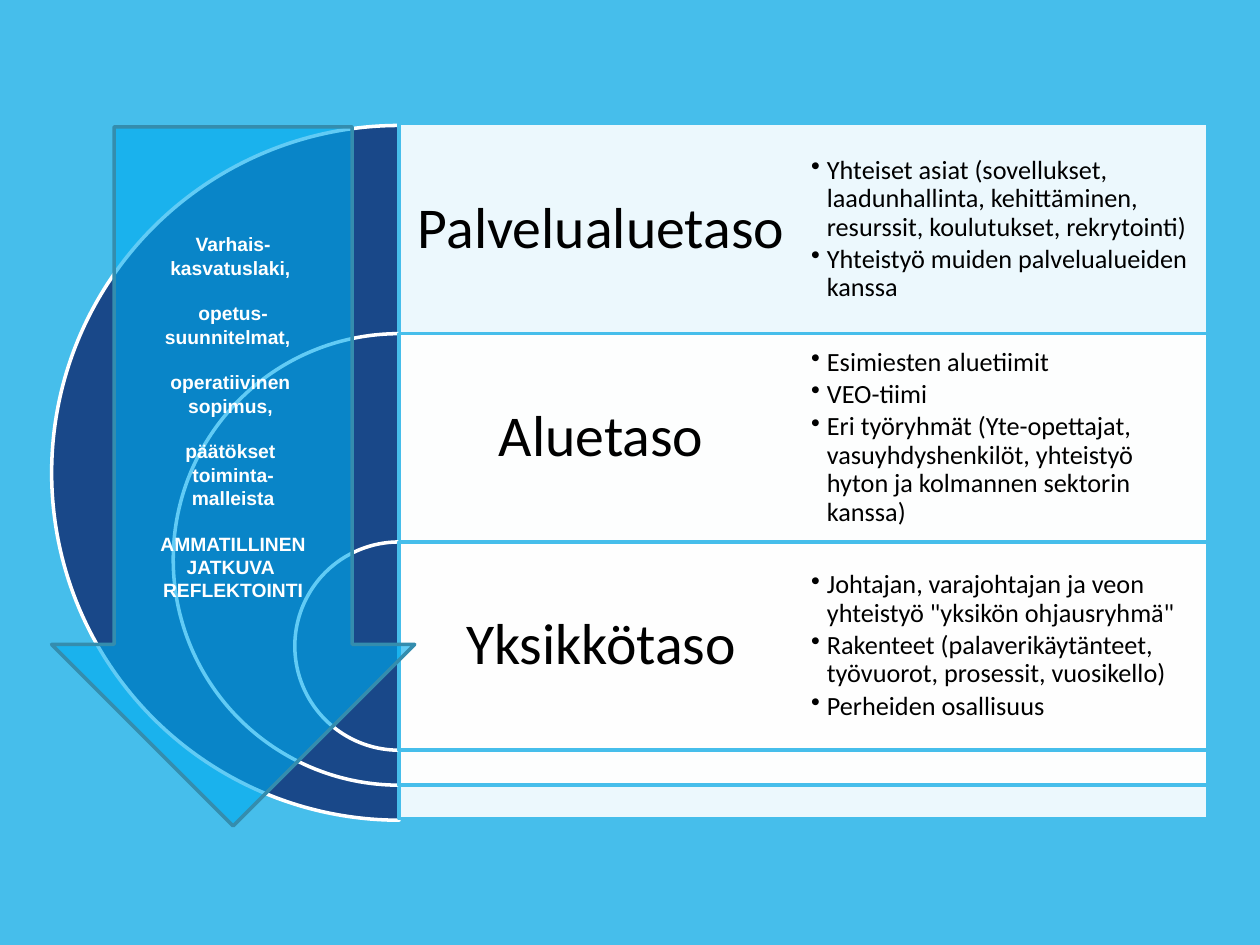
from lxml import etree
from pptx import Presentation
from pptx.dml.color import RGBColor
from pptx.enum.shapes import MSO_SHAPE
from pptx.enum.text import MSO_ANCHOR, PP_ALIGN
from pptx.oxml.ns import qn
from pptx.util import Pt

PIE, RECT, ARROW = MSO_SHAPE.PIE, MSO_SHAPE.RECTANGLE, MSO_SHAPE.DOWN_ARROW
MIDDLE, CENTER, LEFT = MSO_ANCHOR.MIDDLE, PP_ALIGN.CENTER, PP_ALIGN.LEFT

COLORS = {"sky": "46BEEB", "navy": "194889", "white": "FFFFFF",
          "black": "000000", "arrow": "00ACEF", "arrow_line": "348DAE"}

LEVELS = [
    ("Palvelualuetaso", [
        "Yhteiset asiat (sovellukset, laadunhallinta, kehittäminen, "
        "resurssit, koulutukset, rekrytointi)",
        "Yhteistyö muiden palvelualueiden kanssa"]),
    ("Aluetaso", [
        "Esimiesten aluetiimit",
        "VEO-tiimi",
        "Eri työryhmät (Yte-opettajat, vasuyhdyshenkilöt, yhteistyö hyton "
        "ja kolmannen sektorin kanssa)"]),
    ("Yksikkötaso", [
        'Johtajan, varajohtajan ja veon yhteistyö "yksikön ohjausryhmä"',
        "Rakenteet (palaverikäytänteet, työvuorot, prosessit, vuosikello)",
        "Perheiden osallisuus"]),
]
ARROW_GROUPS = [
    ["Varhais-", "kasvatuslaki, "],
    ["opetus-", "suunnitelmat,  "],
    ["operatiivinen ", "sopimus, "],
    ["päätökset ", "toiminta-", "malleista"],
    ["AMMATILLINEN JATKUVA ", "REFLEKTOINTI"],
]


def rgb(name):
    return RGBColor.from_string(COLORS[name])


def add_shape(slide, kind, box, fill, line, opacity=100):
    sp = slide.shapes.add_shape(kind, *map(Pt, box))
    sp.shadow.inherit = False
    sp.fill.solid()
    sp.fill.fore_color.rgb = rgb(fill)
    if opacity < 100:
        color = sp.fill._xPr.find(qn("a:solidFill"))[0]
        etree.SubElement(color, qn("a:alpha"), val=str(opacity * 1000))
    sp.line.color.rgb = rgb(line)
    sp.line.width = Pt(2)
    return sp


def add_text(slide, box, inset):
    tf = slide.shapes.add_textbox(*map(Pt, box)).text_frame
    tf.word_wrap = True
    tf.vertical_anchor = MIDDLE
    tf.margin_left = tf.margin_right = Pt(inset)
    tf.margin_top = tf.margin_bottom = Pt(inset)
    return tf


def add_paragraph(tf, index, text, size, font, color, align, bold=False):
    p = tf.add_paragraph() if index else tf.paragraphs[0]
    p.alignment = align
    r = p.add_run()
    r.text = text
    r.font.size, r.font.name, r.font.bold = Pt(size), font, bold
    r.font.color.rgb = rgb(color)
    return p


def add_bullet(p, indent):
    pPr = p._p.get_or_add_pPr()
    pPr.set("marL", str(Pt(indent)))
    pPr.set("indent", str(-Pt(indent)))
    etree.SubElement(pPr, qn("a:buChar"), char="•")


def add_level_panels(slide, box):
    """Nested half discs on the left, each with its panel on the right."""
    left, top, width, height = box
    row = 119
    step = (height - row) / (len(LEVELS) - 1)
    axis = left + height / 2
    panel_w = left + width - axis
    for i, (title, _) in enumerate(LEVELS):
        y, size = top + i * row, height - i * step
        pie = add_shape(slide, PIE, (axis - size / 2, y, size, size),
                        "navy", "white")
        pie.adjustments[0], pie.adjustments[1] = 54, 162
        add_shape(slide, RECT, (axis, y - (0 if i else 1), panel_w, size),
                  "white", "sky", 90)
        tf = add_text(slide, (axis, y, panel_w / 2, row), 10)
        p = add_paragraph(tf, 0, title, 33, "Calibri", "black", CENTER)
        p.line_spacing = 0.9
    for i, (_, points) in enumerate(LEVELS):
        tf = add_text(slide, (axis + panel_w / 2, top + i * row,
                              panel_w / 2, row), 4.5)
        for j, point in enumerate(points):
            p = add_paragraph(tf, j, point, 15, "Calibri", "black", LEFT)
            p.line_spacing, p.space_after = 0.9, Pt(2.25)
            add_bullet(p, 9)


def add_guidance_arrow(slide, box):
    sp = add_shape(slide, ARROW, box, "arrow", "arrow_line", 62)
    sp.adjustments[0], sp.adjustments[1] = 0.656, 0.5
    tf = sp.text_frame
    tf.word_wrap = True
    tf.vertical_anchor = MIDDLE
    index = 0
    for group in ARROW_GROUPS:
        for j, text in enumerate(group):
            p = add_paragraph(tf, index, text, 11, "Arial", "white", CENTER, True)
            if index and j == 0:
                p.space_before = Pt(13)
            index += 1


def main():
    prs = Presentation()
    prs.slide_width, prs.slide_height = Pt(720), Pt(540)
    slide = prs.slides.add_slide(prs.slide_layouts[6])
    slide.background.fill.solid()
    slide.background.fill.fore_color.rgb = rgb("sky")
    add_level_panels(slide, (29.5, 71.7, 660.5, 397))
    add_guidance_arrow(slide, (29.5, 72.5, 207.5, 399.5))
    prs.save("out.pptx")


if __name__ == "__main__":
    main()
